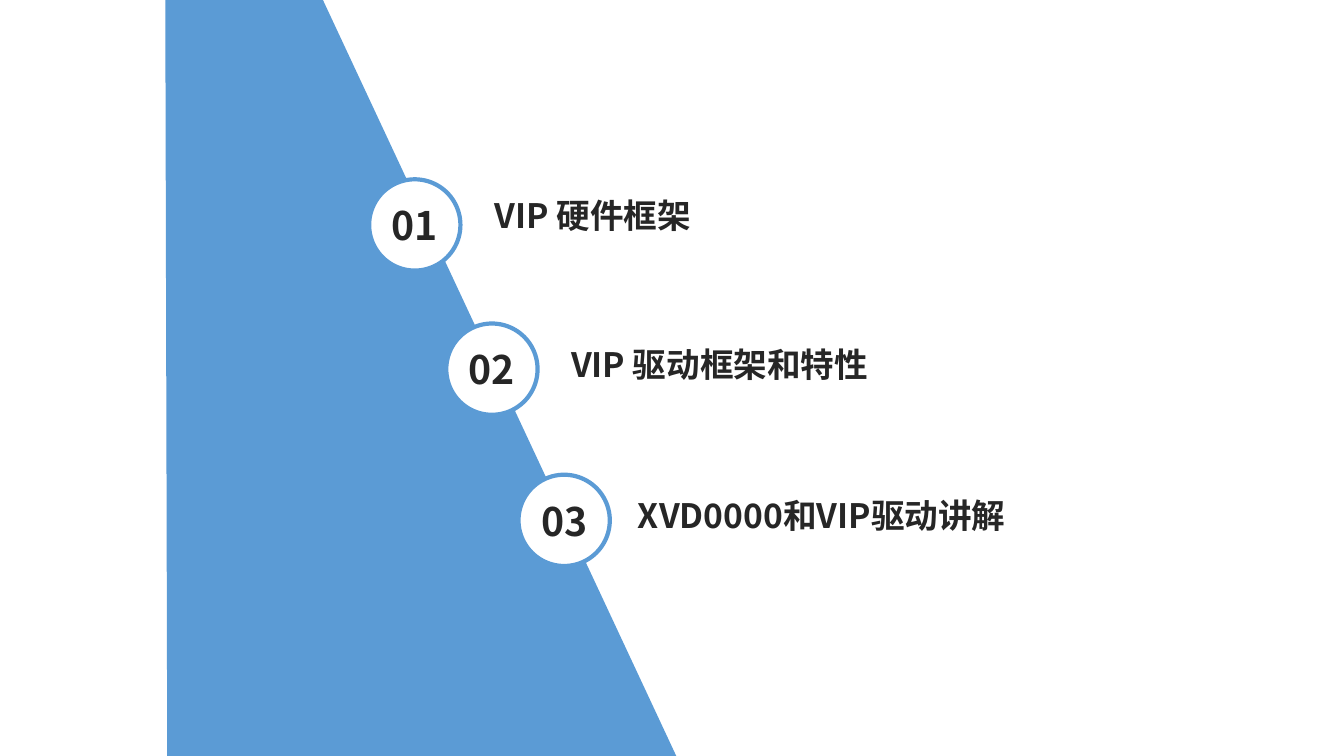
from lxml.etree import SubElement
from pptx import Presentation
from pptx.dml.color import RGBColor
from pptx.enum.shapes import MSO_SHAPE
from pptx.enum.text import MSO_ANCHOR, PP_ALIGN
from pptx.oxml.ns import qn
from pptx.util import Pt

FONT = "Noto Sans CJK SC"
BLUE, WHITE, DARK = "5B9BD5", "FFFFFF", "262626"
PANEL_CORNERS = [(483.1, 540), (230.4, -0.7), (118.1, -0.7), (119.5, 542.9)]
CIRCLE_SIZE = 65.2
LABEL_HEIGHT = 36.4
AGENDA = [
    {"number": "01", "label": "VIP 硬件框架", "circle": (263.7, 128.1), "label_at": (346.3, 135.4), "width": 440},
    {"number": "02", "label": "VIP 驱动框架和特性", "circle": (318.8, 231.1), "label_at": (400.8, 241.9), "width": 394},
    {"number": "03", "label": "XVD0000和VIP驱动讲解", "circle": (370.4, 339.1), "label_at": (448.6, 349.9), "width": 394},
]


def color(value):
    return RGBColor.from_string(value)


def write(shape, text, size, alignment):
    paragraph = shape.text_frame.paragraphs[0]
    paragraph.text = text
    paragraph.alignment = alignment
    font = paragraph.font
    font.name, font.size, font.bold = FONT, Pt(size), True
    font.color.rgb = color(DARK)
    properties = paragraph._p.get_or_add_pPr().find(qn("a:defRPr"))
    SubElement(properties, qn("a:ea")).set("typeface", FONT)


def add_panel(slide):
    corners = [(Pt(x), Pt(y)) for x, y in PANEL_CORNERS]
    builder = slide.shapes.build_freeform(*corners[0])
    builder.add_line_segments(corners[1:], close=True)
    panel = builder.convert_to_shape()
    panel.shadow.inherit = False
    panel.fill.solid()
    panel.fill.fore_color.rgb = color(BLUE)
    panel.line.fill.background()


def add_number(slide, number, position):
    left, top = position
    circle = slide.shapes.add_shape(
        MSO_SHAPE.OVAL, Pt(left), Pt(top), Pt(CIRCLE_SIZE), Pt(CIRCLE_SIZE))
    circle.shadow.inherit = False
    circle.fill.solid()
    circle.fill.fore_color.rgb = color(WHITE)
    circle.line.color.rgb = color(BLUE)
    circle.line.width = Pt(3)
    frame = circle.text_frame
    frame.margin_left = frame.margin_right = frame.margin_top = frame.margin_bottom = 0
    frame.vertical_anchor = MSO_ANCHOR.MIDDLE
    frame.word_wrap = False
    write(circle, number, 28, PP_ALIGN.CENTER)


def add_label(slide, text, position, width):
    left, top = position
    label = slide.shapes.add_textbox(Pt(left), Pt(top), Pt(width), Pt(LABEL_HEIGHT))
    label.text_frame.word_wrap = True
    write(label, text, 24, PP_ALIGN.LEFT)


def main():
    presentation = Presentation()
    presentation.slide_width, presentation.slide_height = Pt(960), Pt(540)
    slide = presentation.slides.add_slide(presentation.slide_layouts[6])
    add_panel(slide)
    for item in AGENDA:
        add_number(slide, item["number"], item["circle"])
        add_label(slide, item["label"], item["label_at"], item["width"])
    presentation.save("out.pptx")


if __name__ == "__main__":
    main()
